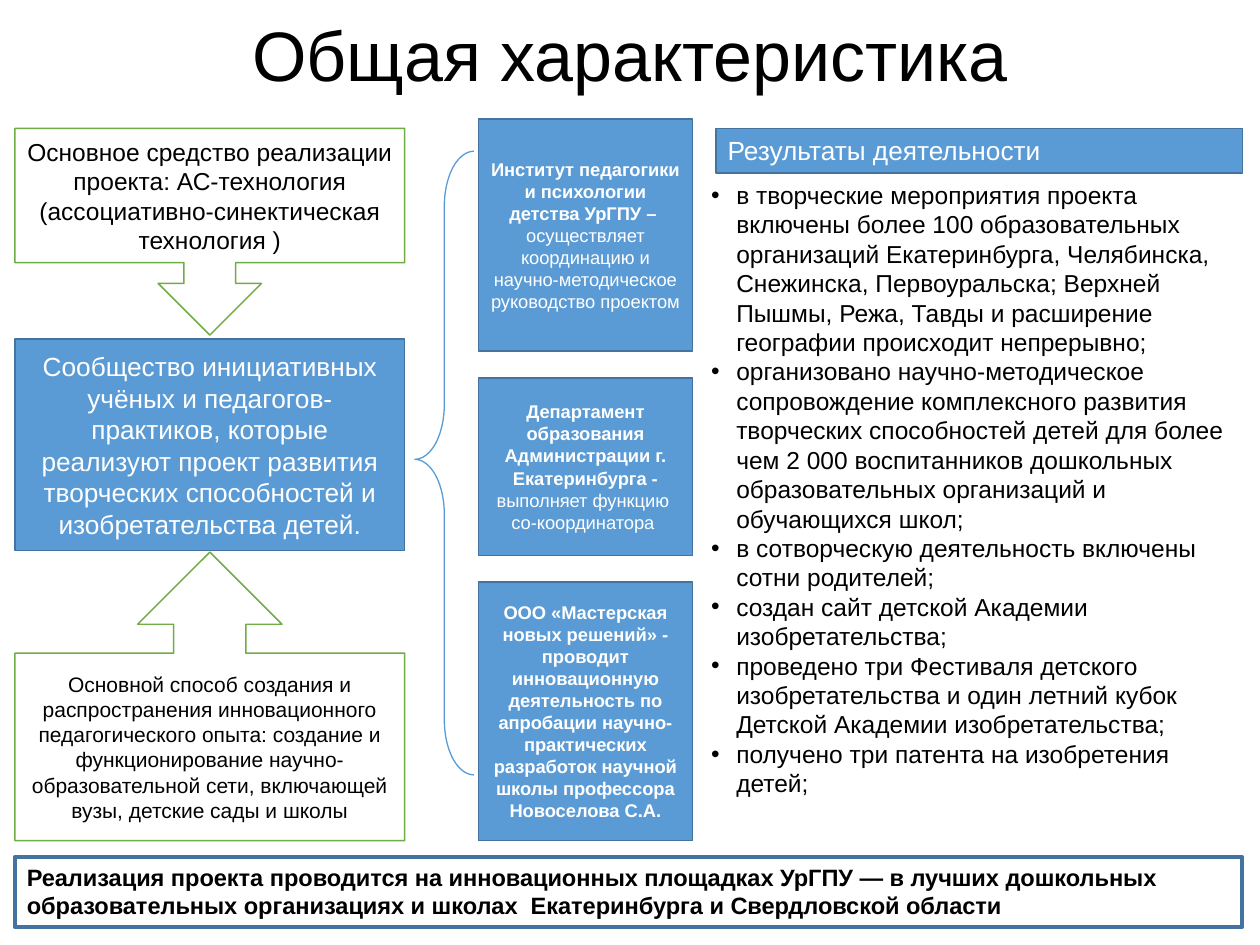
from pptx import Presentation
from pptx.dml.color import RGBColor
from pptx.enum import shapes, text
from pptx.oxml import parse_xml
from pptx.oxml.ns import nsdecls
from pptx.util import Pt

KIND = shapes.MSO_SHAPE
ALIGN = text.PP_ALIGN
ANCHOR = text.MSO_ANCHOR

BLUE, EDGE, GREEN = "5B9BD5", "43739E", "70AD47"
WHITE, BLACK = "FFFFFF", "000000"


def color(code):
    return RGBColor.from_string(code)


class Page:
    font = "Arial"
    inset = (6.75, 3.4)
    thin = 0.85

    def __init__(self, deck):
        self.slide = deck.slides.add_slide(deck.slide_layouts[6])

    def label(self, shape, paras, size, ink, align=ALIGN.CENTER,
              anchor=ANCHOR.MIDDLE):
        """Fill a shape with paragraphs, each a list of (text, bold) runs."""
        frame = shape.text_frame
        frame.word_wrap = True
        frame.vertical_anchor = anchor
        frame.margin_left = frame.margin_right = Pt(self.inset[0])
        frame.margin_top = frame.margin_bottom = Pt(self.inset[1])
        for i, runs in enumerate(paras):
            para = frame.add_paragraph() if i else frame.paragraphs[0]
            para.alignment = align
            for words, bold in runs:
                run = para.add_run()
                run.text = words
                run.font.name = self.font
                run.font.size = Pt(size)
                run.font.bold = bold
                run.font.color.rgb = color(ink)
        return frame

    def shape(self, kind, at, fill, line, width=thin):
        item = self.slide.shapes.add_shape(kind, *map(Pt, at))
        item.shadow.inherit = False
        if fill:
            item.fill.solid()
            item.fill.fore_color.rgb = color(fill)
        else:
            item.fill.background()
        item.line.color.rgb = color(line)
        item.line.width = Pt(width)
        return item

    def panel(self, at, paras, size):
        """Blue box with centred white text."""
        self.label(self.shape(KIND.RECTANGLE, at, BLUE, EDGE), paras, size, WHITE)

    def callout(self, kind, at, words, size):
        item = self.shape(kind, at, WHITE, GREEN)
        self.label(item, [[(words, False)]], size, BLACK)

    def banner(self, at, words, size, fill, ink, width=thin, bold=False):
        item = self.shape(KIND.RECTANGLE, at, fill, EDGE, width)
        self.label(item, [[(words, bold)]], size, ink, ALIGN.LEFT, ANCHOR.TOP)

    def brace(self, at):
        """Brace that opens to the right."""
        item = self.shape(KIND.RIGHT_BRACE, at, None, BLUE, 0.75)
        item.rotation = 180
        item.adjustments[0] = 0.93
        item.adjustments[1] = 0.506

    def bullets(self, at, items, size):
        box = self.slide.shapes.add_textbox(*map(Pt, at))
        frame = self.label(box, [[(item, False)] for item in items], size,
                           BLACK, ALIGN.LEFT, ANCHOR.TOP)
        for para in frame.paragraphs:
            props = para._p.get_or_add_pPr()
            props.set("marL", str(Pt(14.4)))
            props.set("indent", str(-Pt(14.4)))
            props.append(parse_xml(f'<a:buFont {nsdecls("a")} typeface="Arial"/>'))
            props.append(parse_xml(f'<a:buChar {nsdecls("a")} char="•"/>'))

    def title(self, at, words, size):
        box = self.slide.shapes.add_textbox(*map(Pt, at))
        frame = self.label(box, [[(words, False)]], size, BLACK)
        frame.paragraphs[0].line_spacing = 0.9


RESULTS = [
    "в творческие мероприятия проекта включены более 100 образовательных организаций Екатеринбурга, Челябинска, Снежинска, Первоуральска; Верхней Пышмы, Режа, Тавды и расширение географии происходит непрерывно;",
    "организовано научно-методическое сопровождение комплексного развития творческих способностей детей для более чем 2 000 воспитанников дошкольных образовательных организаций и обучающихся школ;",
    "в сотворческую деятельность включены сотни родителей;",
    "создан сайт детской Академии изобретательства;",
    "проведено три Фестиваля детского изобретательства и один летний кубок Детской Академии изобретательства;",
    "получено три патента на изобретения детей;",
]

# top, height, paragraphs
PARTNERS = [
    (67.9, 132.8, [
        [("Институт педагогики и психологии детства УрГПУ – ", True)],
        [("осуществляет координацию и научно-методическое руководство проектом ", False)],
    ]),
    (215.9, 101.5, [
        [("Департамент образования Администрации г. Екатеринбурга - ", True),
         ("выполняет функцию  со-координатора ", False)],
    ]),
    (332.5, 147.9, [
        [("ООО «Мастерская новых решений» - проводит инновационную деятельность по апробации научно-практических разработок научной школы профессора Новоселова С.А.", True)],
    ]),
]


def main():
    deck = Presentation()
    deck.slide_width, deck.slide_height = Pt(720), Pt(540)
    page = Page(deck)
    left, wide = 8.6, 222.7

    page.title((0, 0, 720, 67.7), "Общая характеристика", 40)
    page.bullets((399.6, 99.4, 311.8, 380.9), RESULTS, 14)
    page.banner((409, 73.4, 301, 25.5), "Результаты деятельности", 15, BLUE, WHITE)
    page.banner((left, 489.6, 701.3, 40.3),
                "Реализация проекта проводится на инновационных площадках УрГПУ — в лучших дошкольных образовательных организациях и школах  Екатеринбурга и Свердловской области",
                13.5, None, BLACK, 2.25, True)

    for top, high, paras in PARTNERS:
        page.panel((273.4, top, 122.4, high), paras, 10.5)

    page.callout(KIND.DOWN_ARROW_CALLOUT, (left, 73.4, wide, 118.1),
                 "Основное средство реализации проекта: АС-технология (ассоциативно-синектическая технология )", 14)
    page.callout(KIND.UP_ARROW_CALLOUT, (left, 315.5, wide, 164.9),
                 "Основной способ создания и распространения инновационного педагогического опыта: создание и функционирование научно-образовательной сети, включающей вузы, детские сады и школы", 12)
    page.panel((left, 193.7, wide, 121),
               [[("Сообщество инициативных учёных и педагогов-практиков, которые реализуют проект развития творческих способностей и изобретательства детей.", False)]], 15)
    page.brace((237, 86.4, 33.8, 356.4))

    deck.save("out.pptx")


if __name__ == "__main__":
    main()
